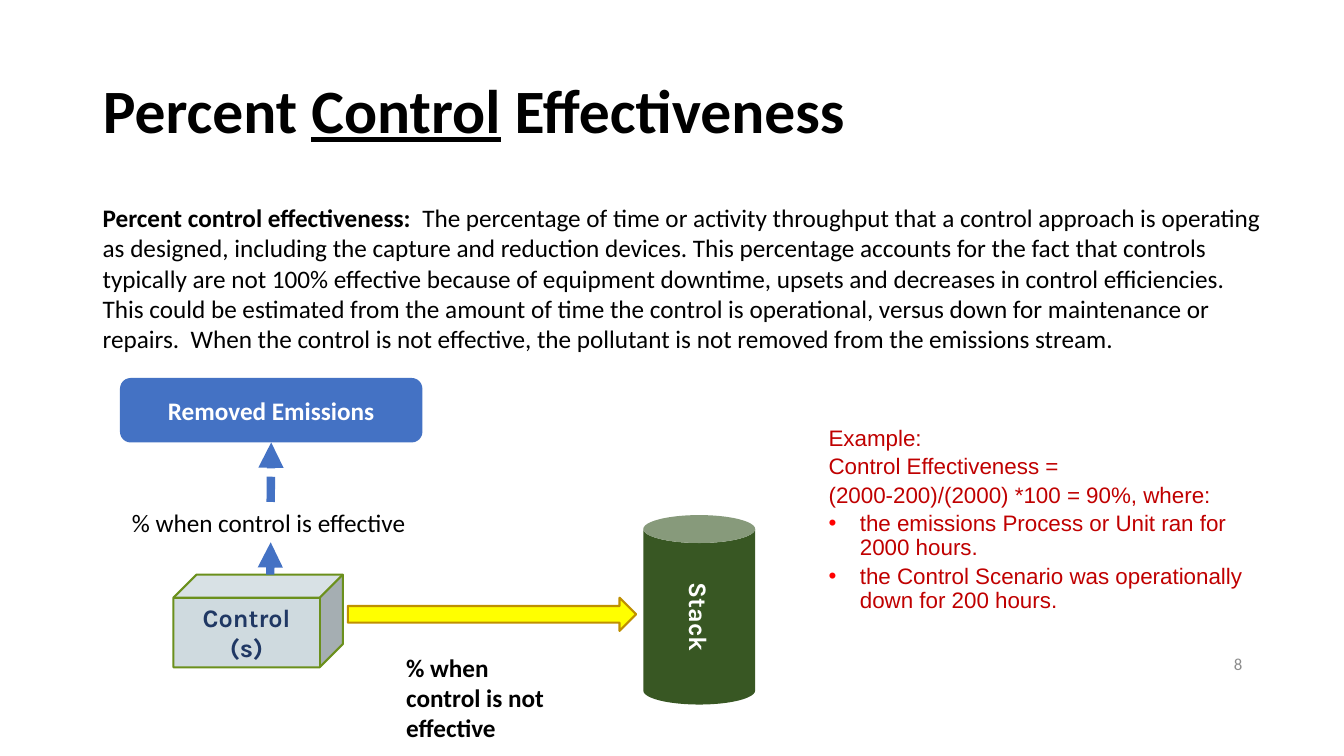
from lxml import etree
from pptx import Presentation
from pptx.dml.color import RGBColor
from pptx.enum.dml import MSO_LINE
from pptx.enum.shapes import MSO_CONNECTOR, MSO_SHAPE
from pptx.enum.text import MSO_ANCHOR, MSO_AUTO_SIZE, PP_ALIGN
from pptx.oxml.ns import qn
from pptx.util import Pt

LEFT, CENTER, RIGHT = PP_ALIGN.LEFT, PP_ALIGN.CENTER, PP_ALIGN.RIGHT
TOP, MIDDLE = MSO_ANCHOR.TOP, MSO_ANCHOR.MIDDLE
NO_FIT = MSO_AUTO_SIZE.NONE
STRAIGHT = MSO_CONNECTOR.STRAIGHT
SQUARE_DOT = MSO_LINE.SQUARE_DOT
CUBE, CAN = MSO_SHAPE.CUBE, MSO_SHAPE.CAN
RIGHT_ARROW, ROUNDED = MSO_SHAPE.RIGHT_ARROW, MSO_SHAPE.ROUNDED_RECTANGLE
EMU_PER_PX = 9144
BLACK, WHITE, BLUE, RED = "000000", "FFFFFF", "4472C4", "C00000"

TITLE = ["Percent ", "Control", " Effectiveness"]
TERM = "Percent control effectiveness:  "
DEFINITION = (
    "The percentage of time or activity throughput that a control approach is operating as "
    "designed, including the capture and reduction devices. This percentage accounts for the "
    "fact that controls typically are not 100% effective because of equipment downtime, upsets "
    "and decreases in control efficiencies.  This could be estimated from the amount of time "
    "the control is operational, versus down for maintenance or repairs.  When the control is "
    "not effective, the pollutant is not removed from the emissions stream."
)
EXAMPLE = ["Example:", "Control Effectiveness =", "(2000-200)/(2000) *100 = 90%, where:"]
EXAMPLE_BULLETS = [
    "the emissions Process or Unit ran for 2000 hours.",
    "the Control Scenario was operationally down for 200 hours.",
]

TITLE_AREA = (92, 40, 1150, 145)
DEFINITION_AREA = (92, 196, 1177, 162)
EXAMPLE_AREA = (812, 419, 463, 197)
NUMBER_AREA = (942, 639, 300, 40)
EFFECTIVE_AREA = (121, 498, 295, 40)
NOT_EFFECTIVE_AREA = (393, 642, 181, 71)
CONTROL_AREA = (172, 570, 168, 92)
REMOVED_AREA = (119, 375, 300, 64)
FLOW_AREA = (345, 593, 286, 33)
STACK_AREA = (638, 511, 111, 188)


def px(*lengths):
    return [round(length * EMU_PER_PX) for length in lengths]


def color(value):
    return RGBColor.from_string(value)


def style(para, size, shade, bold=False, align=LEFT, font="Calibri"):
    para.alignment = align
    para.font.name = font
    para.font.size = Pt(size)
    para.font.bold = bold
    para.font.color.rgb = color(shade)


def add_text(slide, area, texts, size, shade, bold=False, align=LEFT, font="Calibri", anchor=TOP):
    box = slide.shapes.add_textbox(*px(*area))
    frame = box.text_frame
    frame.word_wrap = True
    frame.vertical_anchor = anchor
    frame.text = "\n".join(texts)
    for para in frame.paragraphs:
        style(para, size, shade, bold, align, font)
    return box


def add_block(slide, kind, area, fill, outline=None, label="", shade=WHITE, font="Calibri"):
    block = slide.shapes.add_shape(kind, *px(*area))
    block.shadow.inherit = False
    block.fill.solid()
    block.fill.fore_color.rgb = color(fill)
    if outline:
        block.line.color.rgb = color(outline)
        block.line.width = Pt(1.5)
    else:
        block.line.fill.background()
    if label:
        frame = block.text_frame
        frame.word_wrap = True
        frame.vertical_anchor = MIDDLE
        frame.text = label
        style(frame.paragraphs[0], 18, shade, True, CENTER, font)
    return block


def add_arrow(slide, start, end):
    arrow = slide.shapes.add_connector(STRAIGHT, *px(*start, *end))
    arrow.line.color.rgb = color(BLUE)
    arrow.line.width = Pt(6)
    etree.SubElement(arrow.line._get_or_add_ln(), qn("a:tailEnd"), type="triangle")
    etree.SubElement(arrow._element.spPr, qn("a:effectLst"))
    return arrow


def add_bullet(para):
    props = para._p.get_or_add_pPr()
    indent, = px(31)
    props.set("marL", str(indent))
    props.set("indent", str(-indent))
    tint = etree.SubElement(props, qn("a:buClr"))
    etree.SubElement(tint, qn("a:srgbClr"), val="FF0000")
    etree.SubElement(props, qn("a:buFont"), typeface="Arial")
    etree.SubElement(props, qn("a:buChar"), char="•")


def add_title(slide):
    title = slide.shapes.title
    title.left, title.top, title.width, title.height = px(*TITLE_AREA)
    frame = title.text_frame
    frame.auto_size = NO_FIT
    frame.vertical_anchor = MIDDLE
    para = frame.paragraphs[0]
    for text in TITLE:
        span = para.add_run()
        span.text = text
        if text == "Control":
            span.font.underline = True
    style(para, 44, BLACK, True)
    para.line_spacing = 0.9


def add_definition(slide):
    box = add_text(slide, DEFINITION_AREA, [TERM], 18, BLACK)
    para = box.text_frame.paragraphs[0]
    para.space_after = Pt(10)
    para.runs[0].font.bold = True
    para.add_run().text = DEFINITION


def add_example(slide):
    box = add_text(slide, EXAMPLE_AREA, EXAMPLE + EXAMPLE_BULLETS, 16, RED, font="Arial")
    paras = box.text_frame.paragraphs
    for para in paras:
        para.line_spacing = 0.9
        para.space_before = Pt(3)
    for para in paras[len(EXAMPLE):]:
        add_bullet(para)


def add_diagram(slide):
    add_block(slide, CUBE, CONTROL_AREA, "CFDADF", "6B901C", "Control (s)", "203864", "Karla")
    effective = add_text(slide, EFFECTIVE_AREA, ["% when control is effective"], 18, BLACK)
    removed = add_block(slide, ROUNDED, REMOVED_AREA, BLUE, label="Removed Emissions")

    to_effective = add_arrow(slide, (268, 570), (269, 538))
    to_effective.end_connect(effective, 2)
    to_removed = add_arrow(slide, (269, 498), (269, 439))
    to_removed.line.dash_style = SQUARE_DOT
    to_removed.begin_connect(effective, 0)
    to_removed.end_connect(removed, 2)

    add_text(slide, NOT_EFFECTIVE_AREA, ["% when control is not effective"], 18, BLACK, True)
    add_block(slide, RIGHT_ARROW, FLOW_AREA, "FFFF00", "BF9000")
    stack = add_block(slide, CAN, STACK_AREA, "385723", label="Stack", font="Karla")
    stack.text_frame._txBody.bodyPr.set("vert", "vert")


def main():
    deck = Presentation()
    deck.slide_width, deck.slide_height = px(1333, 750)
    slide = deck.slides.add_slide(deck.slide_layouts[5])
    add_title(slide)
    add_definition(slide)
    add_diagram(slide)
    add_example(slide)
    add_text(slide, NUMBER_AREA, ["8"], 12, "8C8C8C", align=RIGHT, anchor=MIDDLE)
    deck.save("out.pptx")


if __name__ == "__main__":
    main()
